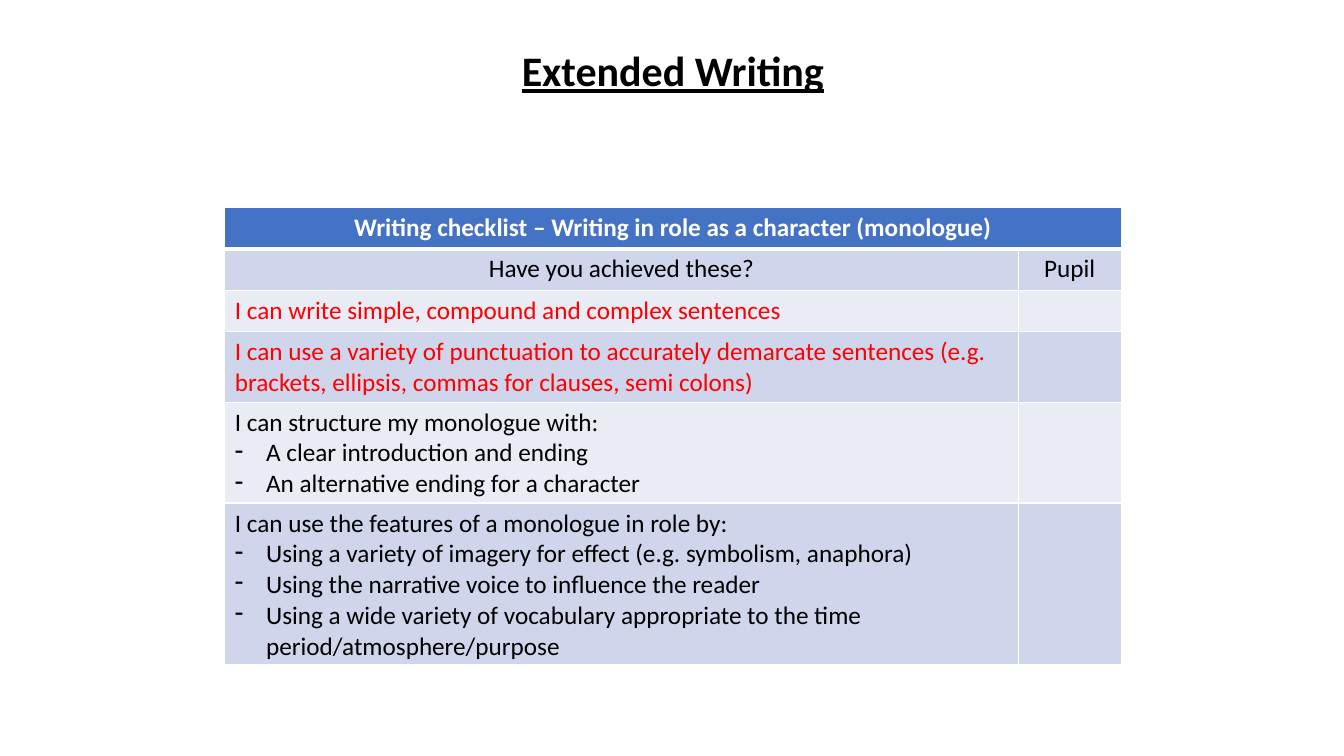
from dataclasses import dataclass

from lxml.etree import SubElement
from pptx import Presentation
from pptx.dml.color import RGBColor
from pptx.enum.text import MSO_ANCHOR, MSO_AUTO_SIZE, PP_ALIGN
from pptx.oxml.ns import qn
from pptx.util import Inches, Pt


@dataclass(frozen=True)
class Theme:
    font: str = "Calibri"
    title_size: int = 30
    table_size: int = 18
    ink: str = "000000"
    white: str = "FFFFFF"
    target: str = "FF0000"
    header: str = "4472C4"
    bands: tuple = ("E9EBF5", "CFD5EA")
    grid_width: int = 1
    header_rule: int = 3


THEME = Theme()
ROW_HEIGHT = 0.41
TABLE_HEIGHT = 4.52
COLUMN_WIDTHS = (7.87, 1.02)
HEADING = "Writing checklist – Writing in role as a character (monologue)"
CRITERIA = [
    (THEME.target, "I can write simple, compound and complex sentences", []),
    (THEME.target,
     "I can use a variety of punctuation to accurately demarcate sentences "
     "(e.g. brackets, ellipsis, commas for clauses, semi colons)", []),
    (THEME.ink, "I can structure my monologue with:", [
        "A clear introduction and ending",
        "An alternative ending for a character",
    ]),
    (THEME.ink, "I can use the features of a monologue in role by:", [
        "Using a variety of imagery for effect (e.g. symbolism, anaphora)",
        "Using the narrative voice to influence the reader",
        "Using a wide variety of vocabulary appropriate to the time "
        "period/atmosphere/purpose",
    ]),
]


def write_line(paragraph, text, size, color=THEME.ink, bold=False, align=PP_ALIGN.LEFT):
    paragraph.text = text
    paragraph.alignment = align
    font = paragraph.runs[0].font
    font.name = THEME.font
    font.size = Pt(size)
    font.bold = bold
    font.color.rgb = RGBColor.from_string(color)
    return font


def add_dash(paragraph):
    properties = paragraph._p.get_or_add_pPr()
    properties.set("marL", str(Inches(0.31)))
    properties.set("indent", str(-Inches(0.31)))
    SubElement(properties, qn("a:buFontTx"))
    SubElement(properties, qn("a:buChar"), char="-")


def style_cell(cell, row):
    properties = cell._tc.get_or_add_tcPr()
    for side in "LRTB":
        beside_header = (row, side) in ((0, "B"), (1, "T"))
        width = THEME.header_rule if beside_header else THEME.grid_width
        border = SubElement(properties, qn(f"a:ln{side}"), w=str(Pt(width)))
        SubElement(SubElement(border, qn("a:solidFill")), qn("a:srgbClr"), val=THEME.white)
    cell.fill.solid()
    color = THEME.bands[row % 2] if row else THEME.header
    cell.fill.fore_color.rgb = RGBColor.from_string(color)


def write_criterion(cell, color, statement, features):
    frame = cell.text_frame
    write_line(frame.paragraphs[0], statement, THEME.table_size, color)
    for feature in features:
        paragraph = frame.add_paragraph()
        write_line(paragraph, feature, THEME.table_size, color)
        add_dash(paragraph)


def write_label(cell, text, color=THEME.ink, bold=False):
    write_line(cell.text_frame.paragraphs[0], text, THEME.table_size, color, bold,
               PP_ALIGN.CENTER)


def add_checklist(slide):
    row_count = len(CRITERIA) + 2
    checklist_frame = slide.shapes.add_table(
        row_count, len(COLUMN_WIDTHS), Inches(2.23), Inches(2.06),
        Inches(sum(COLUMN_WIDTHS)), Inches(TABLE_HEIGHT))
    checklist = checklist_frame.table
    for column, width in zip(checklist.columns, COLUMN_WIDTHS):
        column.width = Inches(width)
    for row_index, row in enumerate(checklist.rows):
        row.height = Inches(ROW_HEIGHT)
        for cell in row.cells:
            style_cell(cell, row_index)
    checklist_frame.height = Inches(TABLE_HEIGHT)

    checklist.cell(0, 0).merge(checklist.cell(0, 1))
    write_label(checklist.cell(0, 0), HEADING, THEME.white, bold=True)
    write_label(checklist.cell(1, 0), "Have you achieved these?")
    write_label(checklist.cell(1, 1), "Pupil")
    for row_index, criterion in enumerate(CRITERIA, start=2):
        write_criterion(checklist.cell(row_index, 0), *criterion)


def set_title(slide, text):
    title = slide.shapes.title
    title.left, title.top = Inches(1.82), Inches(0.39)
    title.width, title.height = Inches(9.71), Inches(0.61)
    frame = title.text_frame
    frame.word_wrap = True
    frame.auto_size = MSO_AUTO_SIZE.SHAPE_TO_FIT_TEXT
    frame.vertical_anchor = MSO_ANCHOR.TOP
    font = write_line(frame.paragraphs[0], text, THEME.title_size, bold=True,
                      align=PP_ALIGN.CENTER)
    font.underline = True


def main():
    presentation = Presentation()
    presentation.slide_width = Inches(13.33)
    presentation.slide_height = Inches(7.5)
    slide = presentation.slides.add_slide(presentation.slide_layouts[5])
    set_title(slide, "Extended Writing")
    add_checklist(slide)
    presentation.save("out.pptx")


if __name__ == "__main__":
    main()
